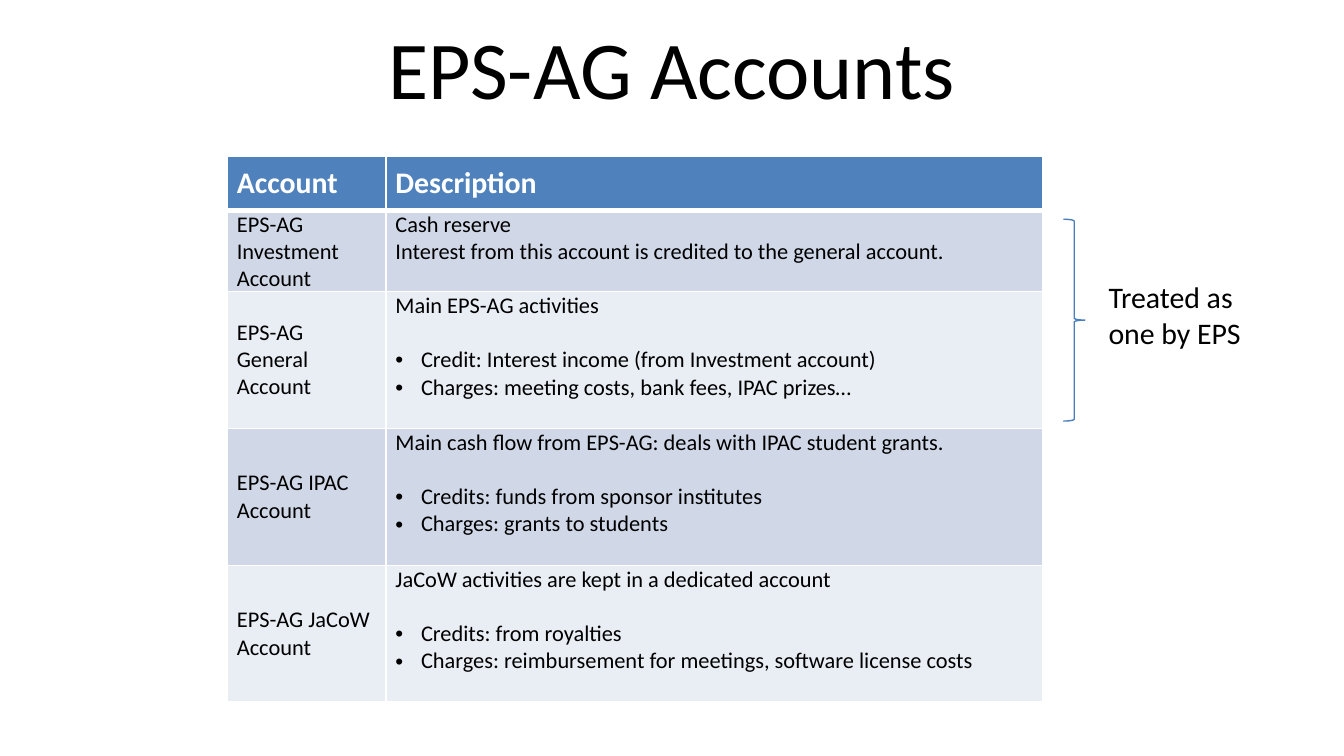
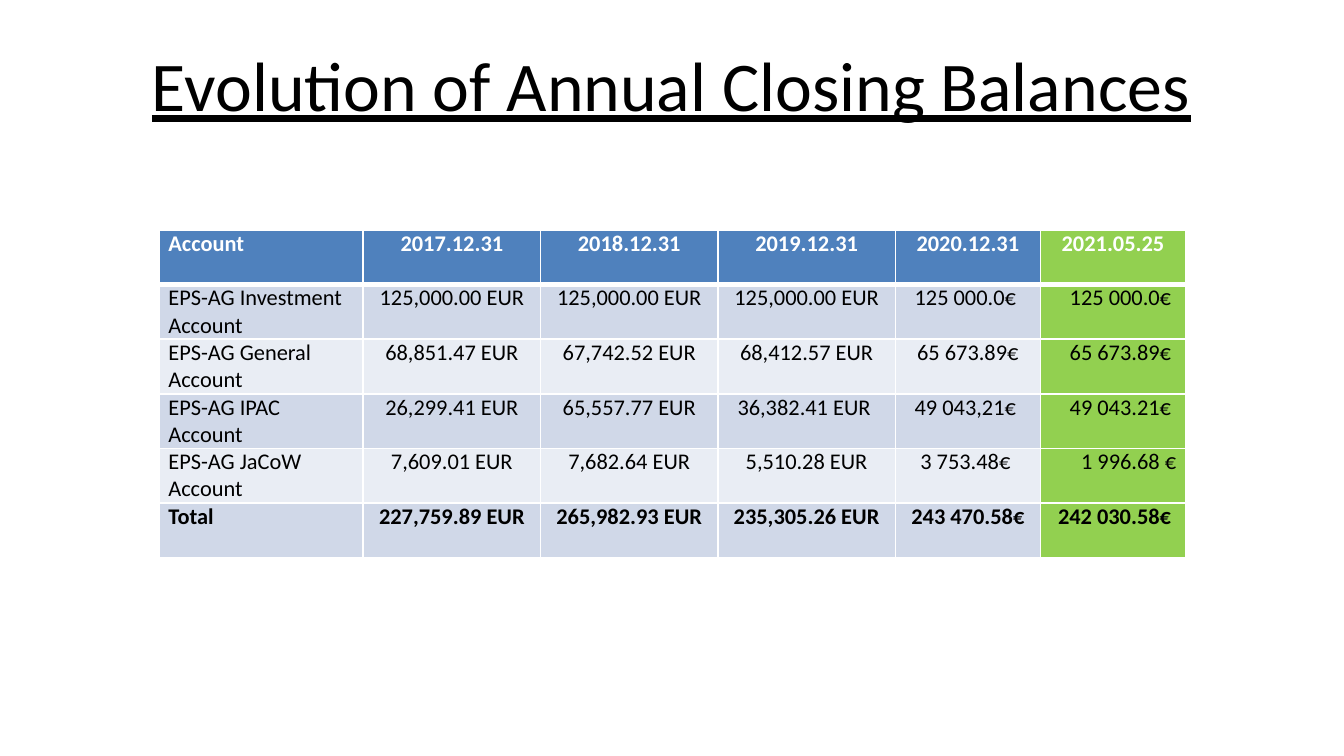
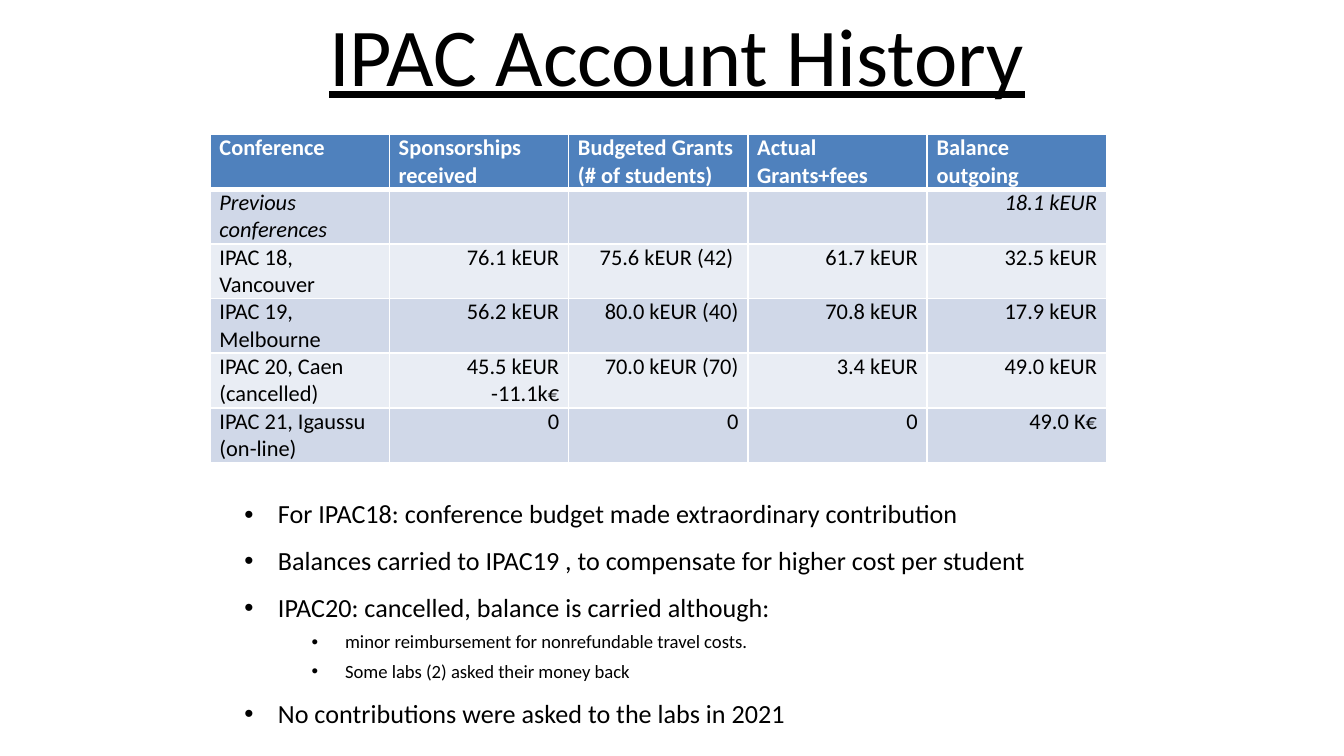
"""Build three slides on the EPS-AG accounts: overview, closing balances and IPAC history."""
from lxml.etree import SubElement as Sub
from pptx import Presentation
from pptx.dml.color import RGBColor as RGB
from pptx.enum.shapes import MSO_SHAPE as Shape
from pptx.enum.text import MSO_ANCHOR as Anchor, PP_ALIGN as Align
from pptx.oxml.ns import qn
from pptx.util import Inches, Pt

THEME = dict(
    font="Calibri", text="000000", white="FFFFFF", head="4F81BD", bands=("D0D8E8", "E9EDF4"),
    current="92D050", brace="4B7EBC", title=44, long_title=37.4, label=16, body=14, cell=12, sub=10,
)
SIZE = 10, 10 * 9 / 16
ALIGN = {"l": Align.LEFT, "c": Align.CENTER, "r": Align.RIGHT}

ACCOUNTS = [
    ("Account", "Description"),
    ("EPS-AG Investment Account",
     "Cash reserve\nInterest from this account is credited to the general account."),
    ("EPS-AG General Account",
     "Main EPS-AG activities\n•Credit: Interest income (from Investment account)\n"
     "•Charges: meeting costs, bank fees, IPAC prizes…"),
    ("EPS-AG IPAC Account",
     "Main cash flow from EPS-AG: deals with IPAC student grants.\n"
     "•Credits: funds from sponsor institutes\n•Charges: grants to students"),
    ("EPS-AG JaCoW Account",
     "JaCoW activities are kept in a dedicated account\n•Credits: from royalties\n"
     "•Charges: reimbursement for meetings, software license costs"),
]
BALANCES = [
    ("Account", "2017.12.31", "2018.12.31", "2019.12.31", "2020.12.31", "2021.05.25"),
    ("EPS-AG Investment Account", "125,000.00 EUR", "125,000.00 EUR", "125,000.00 EUR",
     "125 000.0€ ", "125 000.0€ "),
    ("EPS-AG General Account", "68,851.47 EUR", "67,742.52 EUR", "68,412.57 EUR",
     "65 673.89€", "65 673.89€ "),
    ("EPS-AG IPAC Account", "26,299.41 EUR", "65,557.77 EUR", "36,382.41 EUR ",
     "49 043,21€ ", "49 043.21€ "),
    ("EPS-AG JaCoW Account", "7,609.01 EUR", "7,682.64 EUR", "5,510.28 EUR",
     "3 753.48€ ", "1 996.68 €"),
    ("Total", "227,759.89 EUR", "265,982.93 EUR", "235,305.26 EUR", "243 470.58€", "242 030.58€ "),
]
HISTORY = [
    ("Conference", "Sponsorships\nreceived", "Budgeted Grants (# of students)",
     "Actual\nGrants+fees", "Balance\noutgoing"),
    ("Previous conferences", "", "", "", "18.1 kEUR"),
    ("IPAC 18, Vancouver", "76.1 kEUR", "75.6 kEUR (42) ", "61.7 kEUR", "32.5 kEUR"),
    ("IPAC 19, Melbourne", "56.2 kEUR", "80.0 kEUR (40)", "70.8 kEUR", "17.9 kEUR"),
    ("IPAC 20, Caen (cancelled)", "45.5 kEUR\n-11.1k€", "70.0 kEUR (70)", "3.4 kEUR", "49.0 kEUR"),
    ("IPAC 21, Igaussu (on-line)", "0", "0", "0", "49.0 K€"),
]
NOTES = [
    "•For IPAC18: conference budget made extraordinary contribution",
    "•Balances carried to IPAC19 , to compensate for higher cost per student",
    "•IPAC20: cancelled, balance is carried although:",
    "••minor reimbursement for nonrefundable travel costs.",
    "••Some labs (2) asked their money back",
    "•No contributions were asked to the labs in 2021",
]


def put(obj, **values):
    for name, value in values.items():
        setattr(obj, name, value)


def place(x, y, w, h):
    """Turn percentages of the slide into lengths."""
    return [Inches(share * side / 100) for share, side in zip((x, y, w, h), SIZE * 2)]


def bullet(p, left, hang):
    pPr = p._p.get_or_add_pPr()
    pPr.set("marL", str(Inches(left)))
    pPr.set("indent", str(-Inches(hang)))
    Sub(pPr, qn("a:buFont")).set("typeface", "Arial")
    Sub(pPr, qn("a:buChar")).set("char", "•")


def write(p, text, size, color=THEME["text"], align="l", **font):
    p.alignment = ALIGN[align]
    if text:
        r = p.add_run()
        r.text = text
        put(r.font, name=THEME["font"], size=Pt(size), **font)
        r.font.color.rgb = RGB.from_string(color)


def paragraphs(tf, lines):
    for i, line in enumerate(lines):
        yield (tf.add_paragraph() if i else tf.paragraphs[0]), line


def add_box(slide, box, anchor=Anchor.TOP):
    tf = slide.shapes.add_textbox(*place(*box)).text_frame
    put(tf, word_wrap=True, vertical_anchor=anchor)
    return tf


def add_title(slide, text, box, size=THEME["title"], spacing=None, underline=False):
    p = add_box(slide, box, Anchor.MIDDLE).paragraphs[0]
    p.line_spacing = spacing
    write(p, text, size, align="c", underline=underline)


def border(cell, bottom):
    tcPr = cell._tc.get_or_add_tcPr()
    for side, width in zip("LRTB", (1, 1, 1, bottom)):
        ln = Sub(tcPr, qn(f"a:ln{side}"), w=str(Pt(width)))
        Sub(Sub(ln, qn("a:solidFill")), qn("a:srgbClr")).set("val", THEME["white"])


def fill_cell(cell, text, fill, size, anchor, header, **style):
    put(cell, margin_left=Inches(0.07), margin_right=Inches(0.07), margin_top=0, margin_bottom=0,
        vertical_anchor=anchor)
    border(cell, 3 if header else 1)
    cell.fill.solid()
    cell.fill.fore_color.rgb = RGB.from_string(fill)
    bulleted = False
    for p, line in paragraphs(cell.text_frame, text.split("\n")):
        write(p, line.lstrip("•"), size, **style)
        if line.startswith("•"):
            p.space_before = Pt(0 if bulleted else size * 1.22)
            bullet(p, 0.19, 0.19)
            bulleted = True


def add_grid(slide, rows, box, cols, heights=None, aligns="", head_aligns="", head_size=THEME["cell"],
             anchor=Anchor.TOP, current=None, bold_row=None, italic_row=None):
    x, y, w, h = place(*box)
    heights = heights or [1] * len(rows)
    table = slide.shapes.add_table(len(rows), len(cols), x, y, w, h).table
    for col, share in zip(table.columns, cols):
        col.width = int(w * share / sum(cols))
    for row, share in zip(table.rows, heights):
        row.height = int(h * share / sum(heights))
    for i, row in enumerate(rows):
        header = i == 0
        for j, text in enumerate(row):
            fill = THEME["head"] if header else THEME["bands"][(i - 1) % 2]
            fill_cell(table.cell(i, j), text, THEME["current"] if j == current else fill,
                      head_size if header else THEME["cell"], anchor, header,
                      color=THEME["white" if header else "text"],
                      align=(head_aligns if header else aligns)[j],
                      bold=header or i == bold_row, italic=i == italic_row)
    return table


def accounts_slide(slide):
    add_title(slide, "EPS-AG Accounts", (5, 0.5, 90, 16.7))
    table = add_grid(slide, ACCOUNTS, (16.93, 20.6, 60.7, 72.3), (1.18, 4.89),
                     (0.41, 0.6, 1.02, 1.02, 1.02), "ll", "ll", THEME["label"], Anchor.MIDDLE)
    for i in range(1, len(ACCOUNTS)):
        table.cell(i, 1).margin_bottom = Inches(0.2)
    brace = slide.shapes.add_shape(Shape.RIGHT_BRACE, *place(79.13, 29, 1.6, 26.7))
    brace.shadow.inherit = False
    brace.fill.background()
    brace.line.color.rgb = RGB.from_string(THEME["brace"])
    brace.line.width = Pt(0.75)
    label = add_box(slide, (81.5, 36, 15, 11.4))
    write(label.paragraphs[0], "Treated as one by EPS", THEME["label"])


def balances_slide(slide):
    add_title(slide, "Evolution of Annual Closing Balances", (9.43, 2.4, 81.1, 19.4),
              THEME["long_title"], 0.8, True)
    add_grid(slide, BALANCES, (11.83, 30.4, 76.4, 43.4), (1.52, 1.32, 1.32, 1.32, 1.08, 1.08),
             aligns="lccccr", head_aligns="lccccc", current=5, bold_row=5)


def history_slide(slide):
    add_title(slide, "IPAC Account History", (9.83, -1.8, 81.1, 19.4), spacing=0.9, underline=True)
    tf = add_box(slide, (17.2, 65.45, 66.7, 32.2))
    for p, line in paragraphs(tf, NOTES):
        sub = line.startswith("••")
        put(p, level=int(sub), line_spacing=0.9, space_before=Pt(5 if sub else 10))
        write(p, line.lstrip("•"), THEME["sub" if sub else "body"])
        bullet(p, 0.75 if sub else 0.25, 0.25)
    add_grid(slide, HISTORY, (15.63, 17.8, 66.7, 43.4), [1] * 5,
             aligns="lrrrr", head_aligns="lllll", italic_row=1)


def main():
    prs = Presentation()
    put(prs, slide_width=Inches(SIZE[0]), slide_height=Inches(SIZE[1]))
    for build in (accounts_slide, balances_slide, history_slide):
        build(prs.slides.add_slide(prs.slide_layouts[6]))
    prs.save("out.pptx")


if __name__ == "__main__":
    main()
